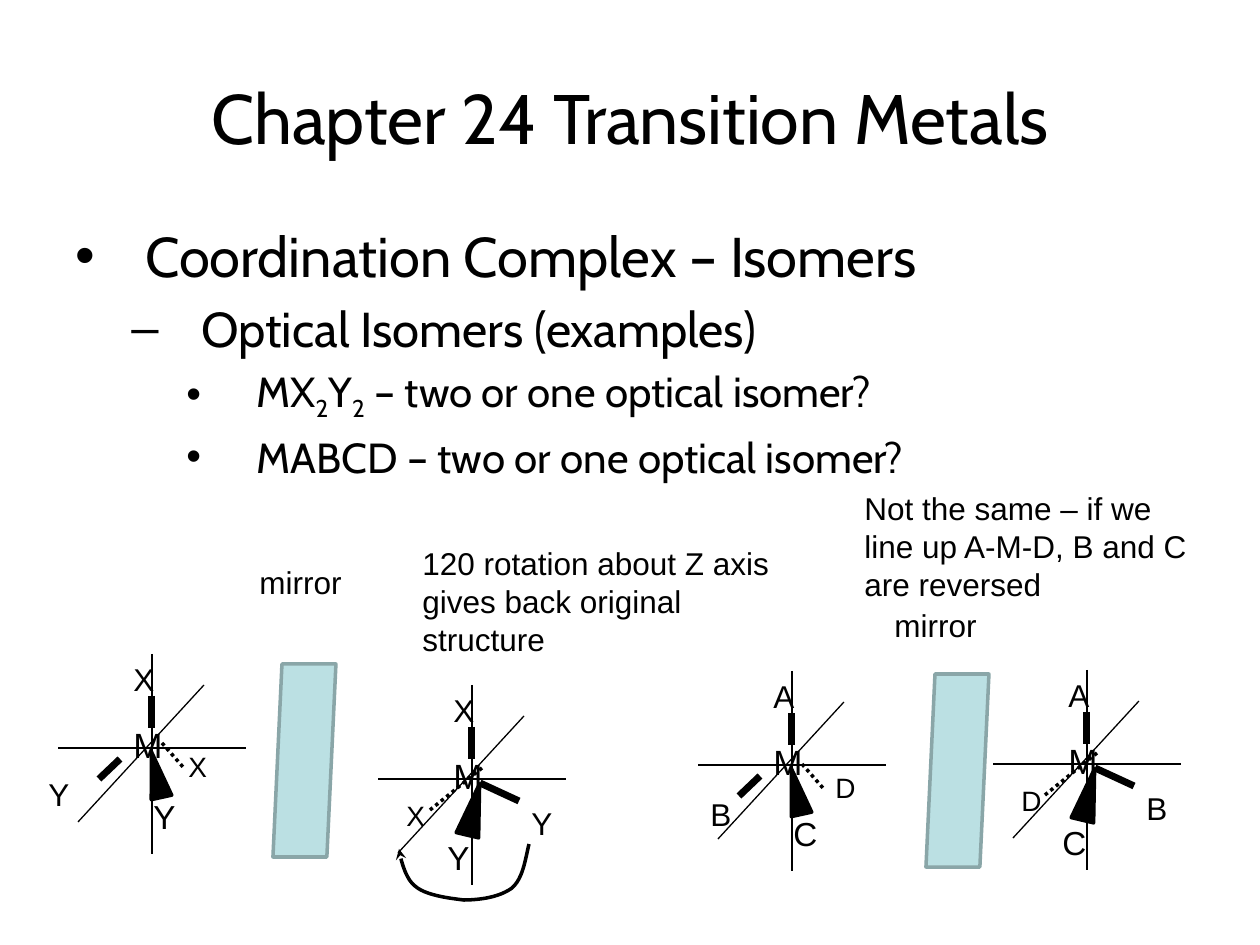
import pptx
import pptx.util
import pptx.dml.color
import pptx.enum.dml
import pptx.enum.shapes
import pptx.enum.text
import lxml.etree
from pptx.oxml.ns import qn

PX = 914400 / 126  # EMU per px
COLORS = {name: pptx.dml.color.RGBColor.from_string(value) for name, value in {
    "ink": "000000", "mirror": "BBE0E3", "mirror edge": "8AA6A8"}.items()}
SHAPE = pptx.enum.shapes.MSO_SHAPE


def add_text(shapes, text, box, size, font="Arial"):
    frame = shapes.add_textbox(*[round(v * PX) for v in box]).text_frame
    frame.word_wrap = True
    frame.text = text
    for paragraph in frame.paragraphs:
        for run in paragraph.runs:
            run.font.size = pptx.util.Pt(size)
            run.font.name = font
            run.font.color.rgb = COLORS["ink"]
    return frame


def add_line(shapes, start, end, width, dash=None):
    line = shapes.add_connector(pptx.enum.shapes.MSO_CONNECTOR.STRAIGHT,
                                *[round(v * PX) for v in (*start, *end)])
    line.line.color.rgb = COLORS["ink"]
    line.line.width = pptx.util.Pt(width)
    if dash:
        line.line.dash_style = dash
    lxml.etree.SubElement(line._element.spPr, qn("a:effectLst"))


deck = pptx.Presentation()
deck.slide_width = round(1260 * PX)
deck.slide_height = round(945 * PX)
slide = deck.slides.add_slide(deck.slide_layouts[6])

# Title
title = add_text(slide.shapes, "Chapter 24 Transition Metals", (63, 38, 1134, 157), 40, "Cabin")
title.vertical_anchor = pptx.enum.text.MSO_ANCHOR.MIDDLE
title.paragraphs[0].alignment = pptx.enum.text.PP_ALIGN.CENTER

# Outline: level, bullet, size, indent, runs (every second run is a subscript)
outline = [
    (0, "•", 32, 70, ["Coordination Complex – Isomers"]),
    (1, "–", 28, 126, ["Optical Isomers (examples)"]),
    (2, "•", 24, 181, ["MX", "2", "Y", "2", " – two or one optical isomer?"]),
    (2, "•", 24, 181, ["MABCD – two or one optical isomer?"]),
]
body = add_text(slide.shapes, "", (63, 215, 1134, 394), 32, "Cabin")
for index, (level, bullet, size, indent, parts) in enumerate(outline):
    paragraph = body.add_paragraph() if index else body.paragraphs[0]
    paragraph.level = level
    props = paragraph._p.get_or_add_pPr()
    props.set("marL", str(round(indent * PX)))
    props.set("indent", str(round(-70 * PX)))
    lxml.etree.SubElement(props, qn("a:buFont")).set("typeface", "Arial")
    lxml.etree.SubElement(props, qn("a:buChar")).set("char", bullet)
    if index:
        paragraph.space_before = pptx.util.Pt(size * 0.2)
    for position, part in enumerate(parts):
        run = paragraph.add_run()
        run.text = part
        run.font.size = pptx.util.Pt(size)
        run.font.name = "Cabin"
        run.font.color.rgb = COLORS["ink"]
        if position % 2:
            run._r.get_or_add_rPr().set("baseline", "-25000")

# Mirrors
for left, top in [(273, 664), (926, 674)]:
    mirror = slide.shapes.add_shape(SHAPE.PARALLELOGRAM,
                                    *[round(v * PX) for v in (left, top, 63, 193)])
    mirror.adjustments[0] = 0.144
    mirror.shadow.inherit = False
    mirror.fill.solid()
    mirror.fill.fore_color.rgb = COLORS["mirror"]
    mirror.line.color.rgb = COLORS["mirror edge"]
    mirror.line.width = pptx.util.Pt(2)

# Notes beside the molecules
for note, box in [
    ("mirror", (247, 557, 110, 50)),
    ("mirror", (882, 600, 110, 50)),
    ("120 rotation about Z axis gives back original structure", (410, 538, 378, 127)),
    ("Not the same – if we line up A-M-D, B and C are reversed", (852, 483, 357, 127)),
]:
    add_text(slide.shapes, note, box, 18)

# Bonds and wedge of each hand, relative to the metal centre
left_hand = {"side": ((-32, 11), (-53, 31)), "rear": ((10, -5), (31, 19)),
             "wedge": (-6, 3, 21, 47), "turn": 347.6}
right_hand = {"side": ((8, 4), (47, 22)), "rear": ((10, -11), (-42, 31)),
              "wedge": (-10, 4, 23, 53), "turn": 13.3}

# Molecules: centre, hand, rear bond drop, ligands as top, side, front, rear, and label offsets
molecules = [
    ((152, 748), left_hand, 0, "XYYX", [(-116, 21), (-11, 42), (24, -5)]),
    ((1087, 764), right_hand, 0, "ABCD", [(47, 19), (-37, 52), (-78, 13)]),
    ((792, 765), left_hand, 4, "ABCD", [(-94, 24), (-11, 42), (31, -1)]),
    ((472, 779), right_hand, 0, "XYYX", [(47, 19), (-37, 52), (-78, 13)]),
]
for (cx, cy), hand, drop, ligands, offsets in molecules:
    molecule = slide.shapes.add_group_shape().shapes
    (side_start, side_end), (rear_start, rear_end) = hand["side"], hand["rear"]
    strokes = [
        ((0, -94), (0, 106), 0.75, None),
        ((94, 0), (-94, 0), 0.75, None),
        ((52, -63), (-74, 74), 0.75, None),
        ((0, -52), (0, -20), 4, None),
        (side_start, side_end, 4, None),
        ((rear_start[0], rear_start[1] + drop), (rear_end[0], rear_end[1] + drop), 2,
         pptx.enum.dml.MSO_LINE.ROUND_DOT),
    ]
    for (x1, y1), (x2, y2), width, dash in strokes:
        add_line(molecule, (cx + x1, cy + y1), (cx + x2, cy + y2), width, dash)

    places = [(-31, -31), (-31, -94), *offsets]
    for atom, (dx, dy), size in zip("M" + ligands, places, (20, 18, 18, 19, 16)):
        add_text(molecule, atom, (cx + dx, cy + dy, 62, 50), size)

    dx, dy, width, height = hand["wedge"]
    wedge = molecule.add_shape(SHAPE.ISOSCELES_TRIANGLE,
                               *[round(v * PX) for v in (cx + dx, cy + dy, width, height)])
    wedge.rotation = hand["turn"]
    wedge.shadow.inherit = False
    wedge.fill.solid()
    wedge.fill.fore_color.rgb = COLORS["ink"]
    wedge.line.color.rgb = COLORS["ink"]
    wedge.line.width = pptx.util.Pt(2)

# Rotation arrow: a chain of cubic curves sampled into short segments
bends = [(529, 844), (525, 861), (523, 878), (512, 888), (500, 897), (480, 900), (464, 900),
         (447, 898), (425, 895), (415, 886), (403, 877), (399, 849), (399, 849)]
sweep = []
for first in range(0, len(bends) - 1, 3):
    for step in range(1, 13):
        t = step / 12
        weights = ((1 - t) ** 3, 3 * t * (1 - t) ** 2, 3 * t * t * (1 - t), t ** 3)
        curve = bends[first:first + 4]
        sweep.append(tuple(round(PX * sum(w * point[axis] for w, point in zip(weights, curve)))
                           for axis in (0, 1)))
builder = slide.shapes.build_freeform(*[round(v * PX) for v in bends[0]])
builder.add_line_segments(sweep, close=False)
rotation = builder.convert_to_shape()
rotation.shadow.inherit = False
rotation.fill.background()
rotation.line.color.rgb = COLORS["ink"]
rotation.line.width = pptx.util.Pt(2)
lxml.etree.SubElement(rotation.line._get_or_add_ln(), qn("a:tailEnd")).set("type", "stealth")

deck.save("out.pptx")
